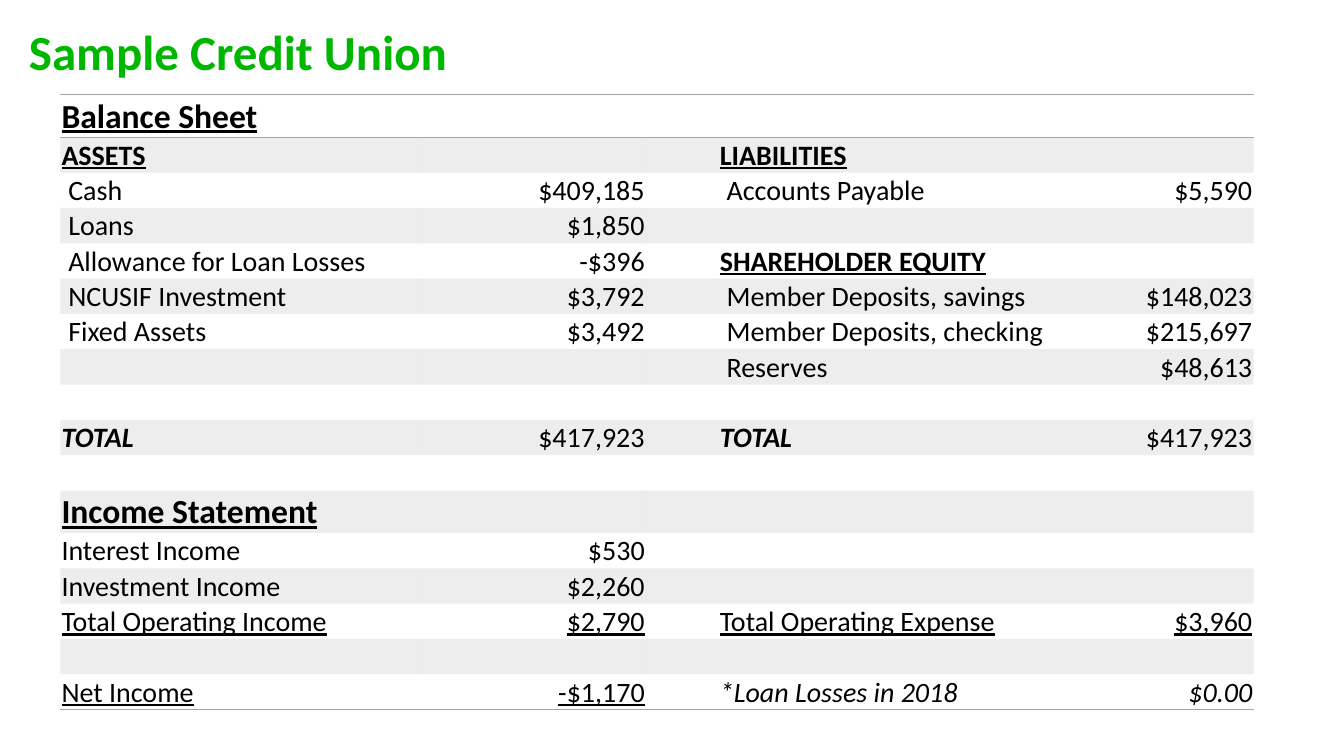
from dataclasses import dataclass

from lxml.etree import SubElement
from pptx import Presentation
from pptx.dml.color import RGBColor
from pptx.enum.text import MSO_ANCHOR as Anchor, PP_ALIGN as Align
from pptx.oxml.ns import qn
from pptx.util import Cm, Pt

FONT = "Calibri"
GREEN, BLACK, GREY = "00B700", "000000", "A5A5A5"
PLAIN_STYLE = "{2D5ABB26-0587-4C30-8999-92F81FD0307C}"
WIDTHS = (9.02, 5.74, 1.83, 9.47, 4.01)
TALL, LOW = 1.07, 0.89
EDGE, INDENT = 0.03, 0.2


@dataclass(frozen=True)
class Look:
    size: int = 20
    bold: bool = False
    under: bool = False
    italic: bool = False
    inset: float = EDGE
    color: str = BLACK


@dataclass(frozen=True)
class Entry:
    label: str
    look: Look
    amount: str = ""
    sum_look: Look = Look()


@dataclass(frozen=True)
class Row:
    left: Entry | None = None
    right: Entry | None = None
    height: float = LOW


TITLE = Look(size=35, bold=True, color=GREEN)
PART = Look(size=24, bold=True, under=True)
HEAD = Look(bold=True, under=True)
ITEM = Look(inset=INDENT)
TOTAL = Look(bold=True, italic=True)
PLAIN = Look()
UNDER = Look(under=True)
NOTE = Look(italic=True)

ROWS = (
    Row(Entry("Balance Sheet", PART), height=TALL),
    Row(Entry("ASSETS", HEAD), Entry("LIABILITIES", HEAD)),
    Row(Entry("Cash", ITEM, "$409,185"),
        Entry("Accounts Payable", ITEM, "$5,590")),
    Row(Entry("Loans", ITEM, "$1,850")),
    Row(Entry("Allowance for Loan Losses", ITEM, "-$396"),
        Entry("SHAREHOLDER EQUITY", HEAD)),
    Row(Entry("NCUSIF Investment", ITEM, "$3,792"),
        Entry("Member Deposits, savings", ITEM, "$148,023")),
    Row(Entry("Fixed Assets", ITEM, "$3,492"),
        Entry("Member Deposits, checking", ITEM, "$215,697")),
    Row(right=Entry("Reserves", ITEM, "$48,613")),
    Row(),
    Row(Entry("TOTAL", TOTAL, "$417,923"),
        Entry("TOTAL", TOTAL, "$417,923")),
    Row(),
    Row(Entry("Income Statement", PART), height=TALL),
    Row(Entry("Interest Income", PLAIN, "$530")),
    Row(Entry("Investment Income", PLAIN, "$2,260")),
    Row(Entry("Total Operating Income", UNDER, "$2,790", UNDER),
        Entry("Total Operating Expense", UNDER, "$3,960", UNDER)),
    Row(),
    Row(Entry("Net Income", UNDER, "-$1,170", UNDER),
        Entry("*Loan Losses in 2018", NOTE, "$0.00", NOTE)),
)
PART_ROW = 11


def paint(target, color: str) -> None:
    target.rgb = RGBColor.from_string(color)


def write(para, text: str, look: Look) -> None:
    run = para.add_run()
    run.text = text
    font = run.font
    font.name, font.size = FONT, Pt(look.size)
    font.bold, font.italic, font.underline = look.bold, look.italic, look.under
    paint(font.color, look.color)


def rule(cell, side: str) -> None:
    """Draw a grey line on one side of a cell, given as lnT or lnB."""
    line = SubElement(cell._tc.get_or_add_tcPr(), qn(f"a:{side}"), w=str(Pt(1)))
    SubElement(SubElement(line, qn("a:solidFill")), qn("a:srgbClr"), val=GREY)


def shade(cell) -> None:
    cell.fill.solid()
    paint(cell.fill.fore_color, GREY)
    tint = cell._tc.tcPr.find(f".//{qn('a:solidFill')}/{qn('a:srgbClr')}")
    SubElement(tint, qn("a:alpha"), val="20000")


def enter(table, row: int, col: int, entry: Entry) -> None:
    """Put a label in one cell and its amount in the next."""
    cell = table.cell(row, col)
    cell.margin_left = Cm(entry.look.inset)
    write(cell.text_frame.paragraphs[0], entry.label, entry.look)
    if entry.amount:
        para = table.cell(row, col + 1).text_frame.paragraphs[0]
        para.alignment = Align.RIGHT
        write(para, entry.amount, entry.sum_look)


def add_title(slide) -> None:
    box = slide.shapes.add_textbox(Cm(0.48), Cm(0.41), Cm(13.18), Cm(1.93))
    frame = box.text_frame
    frame.word_wrap = True
    frame.vertical_anchor = Anchor.MIDDLE
    para = frame.paragraphs[0]
    para.line_spacing, para.space_after = 0.9, Pt(6)
    write(para, "Sample Credit Union", TITLE)


def add_sheet(slide) -> None:
    height = sum(row.height for row in ROWS)
    table = slide.shapes.add_table(len(ROWS), len(WIDTHS), Cm(1.52), Cm(2.39),
                                   Cm(sum(WIDTHS)), Cm(height)).table
    table.first_row = table.horz_banding = False
    table._tbl.tblPr.find(qn("a:tableStyleId")).text = PLAIN_STYLE
    for col, width in zip(table.columns, WIDTHS):
        col.width = Cm(width)

    last = len(ROWS) - 1
    for i, row in enumerate(ROWS):
        table.rows[i].height = Cm(row.height)
        for cell in table.rows[i].cells:
            cell.margin_left = cell.margin_right = cell.margin_top = Cm(EDGE)
            cell.margin_bottom = 0
            cell.vertical_anchor = Anchor.BOTTOM
            if i == 0:
                rule(cell, "lnT")
            if i in (0, last):
                rule(cell, "lnB")
            if i % 2:
                shade(cell)
        for col, entry in ((0, row.left), (3, row.right)):
            if entry:
                enter(table, i, col, entry)
    table.cell(PART_ROW, 0).merge(table.cell(PART_ROW, 1))


def main() -> None:
    deck = Presentation()
    deck.slide_width, deck.slide_height = Cm(33.87), Cm(19.05)
    slide = deck.slides.add_slide(deck.slide_layouts[6])
    add_title(slide)
    add_sheet(slide)
    deck.save("out.pptx")


if __name__ == "__main__":
    main()
